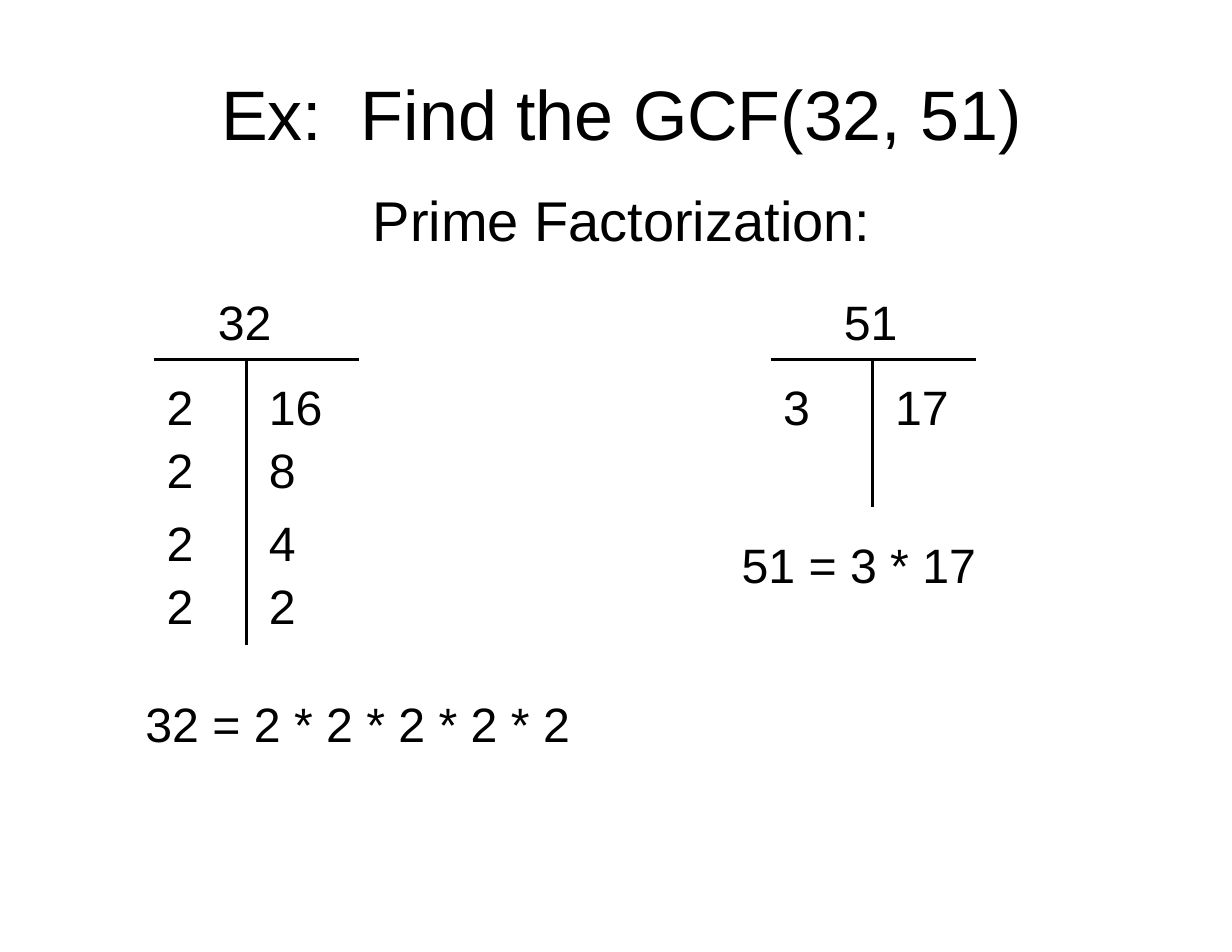
from dataclasses import dataclass

from lxml import etree
from pptx import Presentation
from pptx.dml.color import RGBColor
from pptx.enum.shapes import MSO_CONNECTOR
from pptx.enum.text import MSO_ANCHOR, PP_ALIGN
from pptx.oxml.ns import qn
from pptx.util import Cm, Pt

STRAIGHT = MSO_CONNECTOR.STRAIGHT
TOP, MIDDLE = MSO_ANCHOR.TOP, MSO_ANCHOR.MIDDLE
LEFT, CENTER = PP_ALIGN.LEFT, PP_ALIGN.CENTER


@dataclass(frozen=True)
class Theme:
    ink: RGBColor = RGBColor(0, 0, 0)
    paper: RGBColor = RGBColor(255, 255, 255)
    font: str = "Arial"
    title: int = 45
    subtitle: int = 36
    body: int = 31
    rule: int = 2


THEME = Theme()
ROW_H = 1.63


def set_all(target, values):
    for name, value in values.items():
        setattr(target, name, value)


def add_text(s, box, lines, align=LEFT, anchor=TOP, gap=0):
    tf = s.shapes.add_textbox(*map(Cm, box)).text_frame
    set_all(tf, {
        "word_wrap": True, "vertical_anchor": anchor,
        "margin_left": Cm(0.28), "margin_right": Cm(0.28),
        "margin_top": Cm(0.15), "margin_bottom": Cm(0.15),
    })
    for i, (text, size) in enumerate(lines):
        p = tf.add_paragraph() if i else tf.paragraphs[0]
        p.alignment = align
        if i:
            p.space_before = Pt(gap)
        r = p.add_run()
        r.text = text
        set_all(r.font, {"name": THEME.font, "size": Pt(size)})
        r.font.color.rgb = THEME.ink


def add_line(s, x1, y1, x2, y2):
    line = s.shapes.add_connector(STRAIGHT, Cm(x1), Cm(y1), Cm(x2), Cm(y2))
    line.line.color.rgb = THEME.ink
    line.line.width = Pt(THEME.rule)
    etree.SubElement(line._element.spPr, qn("a:effectLst"))


def add_heading(s, box):
    lines = [("Ex:  Find the GCF(32, 51)", THEME.title),
             ("Prime Factorization:", THEME.subtitle)]
    add_text(s, box, lines, CENTER, MIDDLE, gap=20)


def add_factor_table(s, box, stem_x, number, rows):
    x, y, w, h = box
    add_line(s, x, y, x + w, y)
    add_line(s, stem_x, y, stem_x, y + h)
    add_text(s, (stem_x - 0.93, y - 1.68, 2.6, ROW_H), [(number, THEME.body)])
    for i, row in enumerate(rows):
        pair, item = divmod(i, 2)
        top = y + 0.25 + pair * 3.1 + item * 1.43
        for left, value in zip((x, stem_x + 0.23), row):
            add_text(s, (left, top, 2.08, ROW_H), [(value, THEME.body)])


def add_product(s, box, text):
    add_text(s, box, [(text, THEME.body)])


def main():
    prs = Presentation()
    set_all(prs, {"slide_width": Cm(27.94), "slide_height": Cm(21.59)})
    s = prs.slides.add_slide(prs.slide_layouts[6])
    s.background.fill.solid()
    s.background.fill.fore_color.rgb = THEME.paper

    add_heading(s, (1.17, 1.27, 25.86, 4.8))
    add_factor_table(s, (3.5, 8.15, 4.65, 6.48), 5.59, "32",
                     [("2", "16"), ("2", "8"), ("2", "4"), ("2", "2")])
    add_product(s, (3.02, 15.6, 10.46, ROW_H), "32 = 2 * 2 * 2 * 2 * 2")
    add_factor_table(s, (17.48, 8.15, 4.65, 3.35), 19.79, "51", [("3", "17")])
    add_product(s, (16.54, 11.99, 8.15, ROW_H), "51 = 3 * 17")

    prs.save("out.pptx")


if __name__ == "__main__":
    main()
